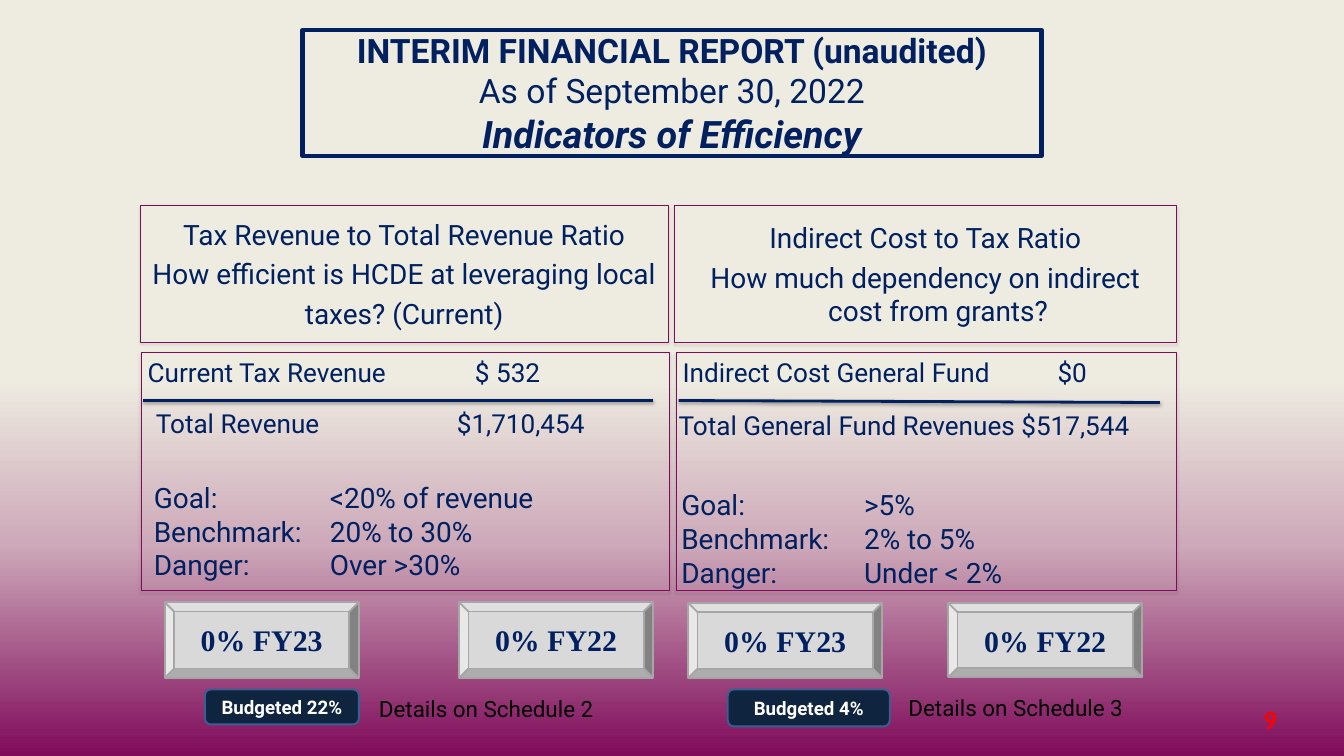
from copy import deepcopy
from lxml.etree import SubElement
from pptx import Presentation
from pptx.dml.color import RGBColor
from pptx.enum.shapes import MSO_CONNECTOR, MSO_SHAPE
from pptx.enum.text import MSO_ANCHOR, MSO_AUTO_SIZE, PP_ALIGN
from pptx.oxml.ns import qn
from pptx.util import Inches, Pt

INK = {k: RGBColor.from_string(v) for k, v in {
    "navy": "002060", "cream": "EEECE1", "pink": "CDA9B9", "plum": "7F0B5B",
    "grey": "D9D9D9", "edge": "A6A6A6", "dark": "0F243E", "blue": "376092",
    "white": "FFFFFF", "black": "000000", "red": "FF0000"}.items()}


def write(shape, text, size, ink="navy", font="Roboto", bold=False,
          align=PP_ALIGN.LEFT, before=0, tab=None):
    frame = shape.text_frame
    frame.word_wrap = True
    frame.text = text
    for para in frame.paragraphs:
        para.alignment = align
        para.space_before = Pt(before)
        if tab:
            tabs = SubElement(para._p.get_or_add_pPr(), qn("a:tabLst"))
            SubElement(tabs, qn("a:tab"), pos=str(Inches(tab)), algn="l")
        for run in para.runs:
            run.font.size = Pt(size)
            run.font.name = font
            run.font.bold = bold
            run.font.color.rgb = INK[ink]


def shade(shape):
    props = shape._element.spPr
    effect = props.find(qn("a:effectLst"))
    if effect is None:
        effect = SubElement(props, qn("a:effectLst"))
    drop = SubElement(effect, qn("a:outerShdw"), blurRad=str(Pt(3.1)),
                      dist=str(Pt(1.8)), dir="5400000", rotWithShape="0")
    tone = SubElement(drop, qn("a:srgbClr"), val="000000")
    SubElement(tone, qn("a:alpha"), val="35000")


prs = Presentation()
prs.slide_width, prs.slide_height = Inches(20), Inches(11.25)
slide = prs.slides.add_slide(prs.slide_layouts[5])
shapes = slide.shapes

fill = slide.background.fill
fill.gradient()
fill.gradient_angle = 270
stops = slide.element.find(".//" + qn("a:gsLst"))
stops.append(deepcopy(stops[0]))
for stop, (spot, ink) in zip(fill.gradient_stops,
                             [(0.5, "cream"), (0.72, "pink"), (1, "plum")]):
    stop.position = spot
    stop.color.rgb = INK[ink]

title = shapes.title
title.left, title.top = Inches(4.5), Inches(0.45)
title.width, title.height = Inches(11), Inches(1.87)
title.line.color.rgb = INK["navy"]
title.line.width = Pt(4.5)
write(title, "INTERIM FINANCIAL REPORT (unaudited)\vAs of September 30, 2022\v"
      "Indicators of Efficiency", 36, bold=True, align=PP_ALIGN.CENTER)
frame = title.text_frame
frame.auto_size = MSO_AUTO_SIZE.NONE
frame.vertical_anchor = MSO_ANCHOR.MIDDLE
frame.margin_left = frame.margin_right = frame.margin_top = frame.margin_bottom = 0
head, date, topic = frame.paragraphs[0].runs
date.font.bold = False
topic.font.size = Pt(40.5)
topic.font.italic = True

panels = [
    (2.09, 3.06, 7.85, 2.03, "Tax Revenue to Total Revenue Ratio\n"
     "How efficient is HCDE at leveraging local\ntaxes? (Current)", None),
    (10.04, 3.06, 7.46, 2.04, "Indirect Cost to Tax Ratio\n"
     "How much dependency on indirect cost from grants?", None),
    (2.1, 5.25, 7.86, 3.54, "Current Tax Revenue\t$ 532", 4.87),
    (10.06, 5.25, 7.44, 3.54, "Indirect Cost General Fund\t$0", 5.58)]
for x, y, w, h, text, tab in panels:
    panel = shapes.add_shape(MSO_SHAPE.RECTANGLE, Inches(x), Inches(y), Inches(w), Inches(h))
    panel._element.set("useBgFill", "1")
    panel.line.color.rgb = INK["plum"]
    panel.line.width = Pt(0.75)
    panel.shadow.inherit = False
    shade(panel)
    if tab:
        write(panel, text, 28, tab=tab, before=5.6 if x < 10 else 0)
        panel.text_frame.vertical_anchor = MSO_ANCHOR.TOP
    else:
        write(panel, text, 30, align=PP_ALIGN.CENTER, before=6)
        panel.text_frame.vertical_anchor = MSO_ANCHOR.MIDDLE
        for para in panel.text_frame.paragraphs:
            props = para._p.get_or_add_pPr()
            props.set("marL", str(Inches(0.38)))
            props.set("indent", str(Inches(-0.38)))

bevel = (MSO_SHAPE.BEVEL, "grey", "edge", 32, "navy", "Times New Roman")
badge = (MSO_SHAPE.ROUNDED_RECTANGLE, "dark", "blue", 20, "white", "Roboto")
for look, x, y, w, h, text in [
        (bevel, 2.45, 8.96, 2.89, 1.13, "0% FY23"),
        (bevel, 6.83, 8.96, 2.89, 1.13, "0% FY22"),
        (bevel, 10.24, 8.97, 2.89, 1.12, "0% FY23"),
        (bevel, 14.11, 8.97, 2.89, 1.11, "0% FY22"),
        (badge, 3.05, 10.26, 2.29, 0.52, "Budgeted 22%"),
        (badge, 10.83, 10.26, 2.41, 0.55, "Budgeted 4%")]:
    kind, face, edge, size, ink, font = look
    box = shapes.add_shape(kind, Inches(x), Inches(y), Inches(w), Inches(h))
    box.fill.solid()
    box.fill.fore_color.rgb = INK[face]
    box.line.color.rgb = INK[edge]
    box.line.width = Pt(2)
    box.shadow.inherit = False
    write(box, text, size, ink, font, True, PP_ALIGN.CENTER)
    box.text_frame.vertical_anchor = MSO_ANCHOR.MIDDLE

for x, end, drop in [(2.13, 9.72, 5.96), (10.1, 17.26, 5.99)]:
    rule = shapes.add_connector(MSO_CONNECTOR.STRAIGHT, Inches(x), Inches(5.96),
                                Inches(end), Inches(drop))
    rule.line.color.rgb = INK["navy"]
    rule.line.width = Pt(3)
    shade(rule)

for x, y, w, h, text, size, ink, tab in [
        (5.54, 10.3, 3.48, 0.5, "Details on Schedule 2", 24, "black", None),
        (13.42, 10.28, 3.83, 0.5, "Details on Schedule 3", 24, "black", None),
        (2.19, 7.1, 7.87, 1.62, "Goal:\t<20% of revenue\nBenchmark:\t20% to 30%\n"
         "Danger:\tOver >30%", 30, "navy", 2.62),
        (10.04, 7.21, 7.46, 1.62, "Goal:\t>5%\nBenchmark:\t2% to 5%\n"
         "Danger:\tUnder < 2%", 30, "navy", 2.72),
        (10, 6.05, 7.67, 0.57, "Total General Fund Revenues $517,544", 28, "navy", None),
        (2.22, 6.02, 7.59, 0.57, "Total Revenue\t$1,710,454", 28, "navy", 4.48)]:
    note = shapes.add_textbox(Inches(x), Inches(y), Inches(w), Inches(h))
    write(note, text, size, ink, tab=tab)
    note.text_frame.auto_size = MSO_AUTO_SIZE.SHAPE_TO_FIT_TEXT

page = shapes.add_textbox(Inches(18.58), Inches(10.46), Inches(0.42), Inches(0.47))
write(page, "9", 28, "red", "Calibri", True, PP_ALIGN.RIGHT)
frame = page.text_frame
frame.margin_left = frame.margin_right = frame.margin_top = frame.margin_bottom = 0
frame.auto_size = MSO_AUTO_SIZE.SHAPE_TO_FIT_TEXT

prs.save("out.pptx")
